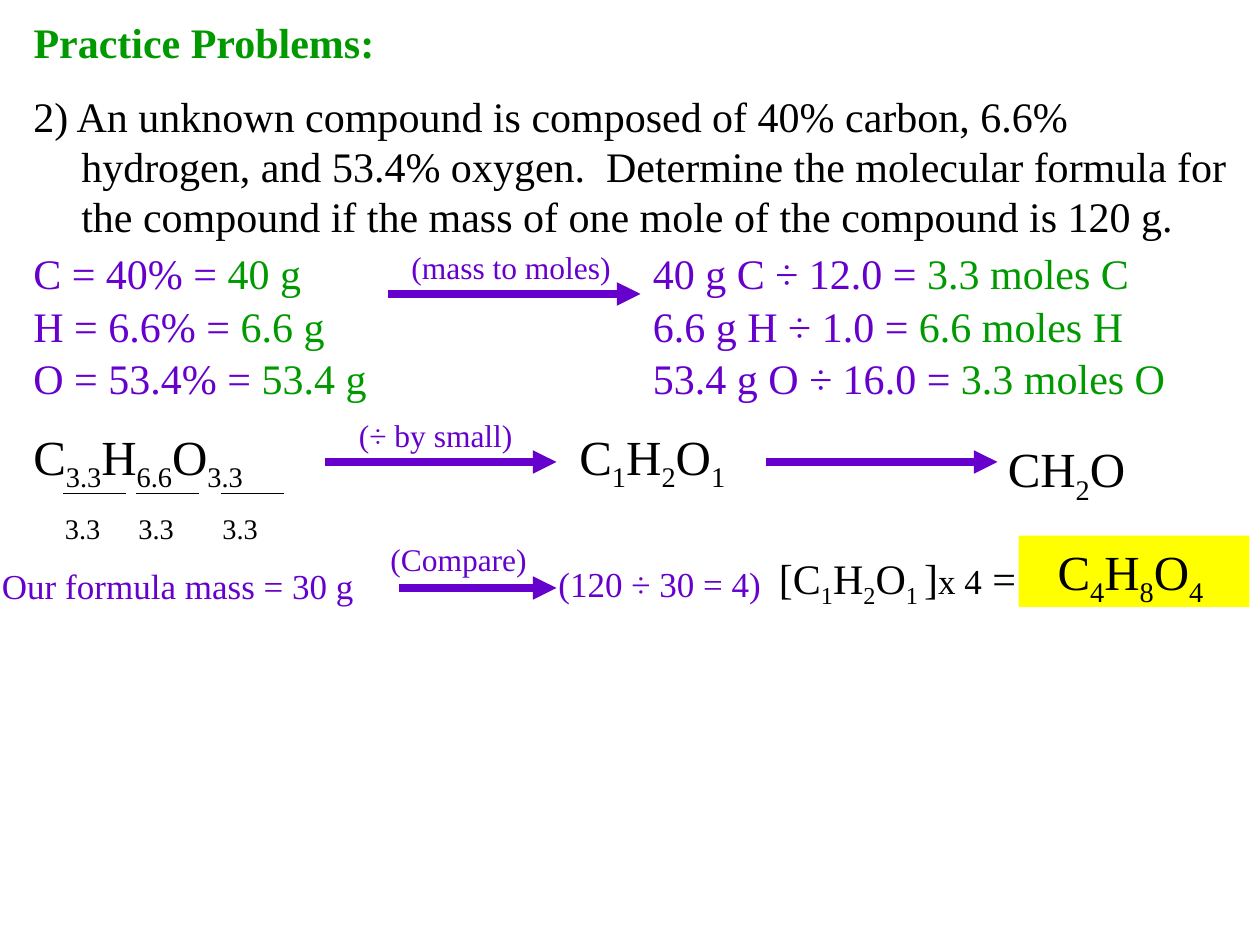
from lxml import etree
from pptx import Presentation
from pptx.dml.color import RGBColor
from pptx.enum.shapes import MSO_CONNECTOR, MSO_SHAPE
from pptx.enum.text import MSO_ANCHOR, MSO_AUTO_SIZE, PP_ALIGN
from pptx.oxml.ns import qn
from pptx.util import Inches, Pt

GREEN = RGBColor(0x00, 0x99, 0x00)
PURPLE = RGBColor(0x66, 0x00, 0xCC)
BLACK = RGBColor(0x00, 0x00, 0x00)
YELLOW = RGBColor(0xFF, 0xFF, 0x00)

STRAIGHT = MSO_CONNECTOR.STRAIGHT
RECTANGLE = MSO_SHAPE.RECTANGLE
TOP = MSO_ANCHOR.TOP
GROW = MSO_AUTO_SIZE.SHAPE_TO_FIT_TEXT
LEFT, CENTER = PP_ALIGN.LEFT, PP_ALIGN.CENTER

FONT = "Times New Roman"
TITLE_ONLY = 5
CELLS_PER_INCH = 12
HANGING = Inches(0.38)


def cells(count):
    return Inches(count / CELLS_PER_INCH)


class ProblemSlide:
    """Places elements on a grid of 120 columns by 90 rows."""

    def __init__(self, slide):
        self.slide = slide

    def place(self, shape, col, row, cols, rows):
        shape.left, shape.top = cells(col), cells(row)
        shape.width, shape.height = cells(cols), cells(rows)

    def add_runs(self, shape, parts, size, align=LEFT, bold=False):
        """Add (text, colour[, size]) parts; underscores switch subscript on and off."""
        frame = shape.text_frame
        frame.word_wrap = True
        frame.auto_size = GROW
        frame.vertical_anchor = TOP
        paragraph = frame.paragraphs[0]
        paragraph.alignment = align
        for text, colour, *own_size in parts:
            for index, piece in enumerate(text.split("_")):
                if not piece:
                    continue
                run = paragraph.add_run()
                run.text = piece
                font = run.font
                font.name, font.bold = FONT, bold
                font.size = Pt(own_size[0] if own_size else size)
                font.color.rgb = colour
                if index % 2:
                    run._r.get_or_add_rPr().set("baseline", "-25000")
        return paragraph

    def line_rows(self, size):
        """Height in rows of one text line with its margins."""
        return size * 0.2 + 1.2

    def title(self, text, col, row, cols, size=24):
        shape = self.slide.shapes.title
        self.place(shape, col, row, cols, self.line_rows(size))
        self.add_runs(shape, [(text, GREEN)], size, bold=True)

    def text(self, parts, col, row, cols, size=24, rows=None):
        box = self.slide.shapes.add_textbox(0, 0, 0, 0)
        self.place(box, col, row, cols, rows or self.line_rows(size))
        return self.add_runs(box, parts, size)

    def question(self, text, col, row, cols, rows):
        paragraph = self.text([(text, BLACK)], col, row, cols, rows=rows)
        properties = paragraph._p.get_or_add_pPr()
        properties.set("marL", str(HANGING))
        properties.set("indent", str(-HANGING))

    def formula(self, text, col, row, cols, rows=None):
        self.text([(text, BLACK)], col, row, cols, 28, rows)

    def note(self, text, col, row, cols, size=18):
        self.text([(text, PURPLE)], col, row, cols, size)

    def answer(self, text, col, row, cols, size=28):
        box = self.slide.shapes.add_shape(RECTANGLE, 0, 0, 0, 0)
        self.place(box, col, row, cols, self.line_rows(size))
        box.shadow.inherit = False
        box.fill.solid()
        box.fill.fore_color.rgb = YELLOW
        box.line.fill.background()
        self.add_runs(box, [(text, BLACK)], size, CENTER)

    def rule(self, start, end, row, colour=BLACK, width=0.75):
        line = self.slide.shapes.add_connector(
            STRAIGHT, cells(start), cells(row), cells(end), cells(row))
        line.line.color.rgb = colour
        line.line.width = Pt(width)
        etree.SubElement(line._element.spPr, qn("a:effectLst"))
        return line

    def arrow(self, start, end, row):
        line = self.rule(start, end, row, PURPLE, 4.5)
        head = etree.SubElement(line.line._get_or_add_ln(), qn("a:tailEnd"))
        head.set("type", "triangle")


def main():
    deck = Presentation()
    deck.slide_width, deck.slide_height = Inches(10), Inches(7.5)
    page = ProblemSlide(deck.slides.add_slide(deck.slide_layouts[TITLE_ONLY]))

    page.title("Practice Problems:", 2, 1, 117)
    page.question(
        "2) An unknown compound is composed of 40% carbon, 6.6% hydrogen, "
        "and 53.4% oxygen.  Determine the molecular formula for the compound "
        "if the mass of one mole of the compound is 120 g.", 2, 8, 117, 15.6)

    # Percentages to masses, masses to moles
    elements = [
        ("C = 40% = ", "40 g", "40 g C ÷ 12.0 = ", "3.3 moles C"),
        ("H = 6.6% = ", "6.6 g", "6.6 g H ÷ 1.0 = ", "6.6 moles H"),
        ("O = 53.4% = ", "53.4 g", "53.4 g O ÷ 16.0 = ", "3.3 moles O"),
    ]
    for index, (percent, mass, division, moles) in enumerate(elements):
        row = 23 + 5 * index
        page.text([(percent, PURPLE), (mass, GREEN)], 2, row, 35)
        page.text([(division, PURPLE), (moles, GREEN)], 61, row, 54)
    page.note("(mass to moles)", 38, 23, 22)
    page.arrow(37, 61, 28)

    # Division by the smallest amount gives the empirical formula
    page.formula("C_3.3_H_6.6_O_3.3", 2, 40, 31)
    for divisor_col, rule_col in ((5, 6), (12, 13), (20, 21)):
        page.rule(rule_col, rule_col + 6, 47)
        page.formula("_3.3", divisor_col, 45, 8, 5)
    page.note("(÷ by small)", 33, 39, 19)
    page.arrow(31, 53, 44)
    page.formula("C_1_H_2_O_1", 54, 40, 25)
    page.arrow(73, 95, 44)
    page.formula("CH_2_O", 94.8, 41.2, 25)

    # Comparison of masses gives the molecular formula
    page.note("Our formula mass = 30 g", -1, 53.2, 40, 20)
    page.note("(Compare)", 36, 50.8, 16)
    page.arrow(38, 53, 56)
    page.note("(120 ÷ 30 = 4)", 52, 53, 27, 20)
    page.text([("[C_1_H_2_O_1 _]", BLACK), ("x 4", BLACK, 20), (" =", BLACK)],
              73, 52, 29)
    page.answer("C_4_H_8_O_4 ", 97, 51, 22)

    deck.save("out.pptx")


if __name__ == "__main__":
    main()
